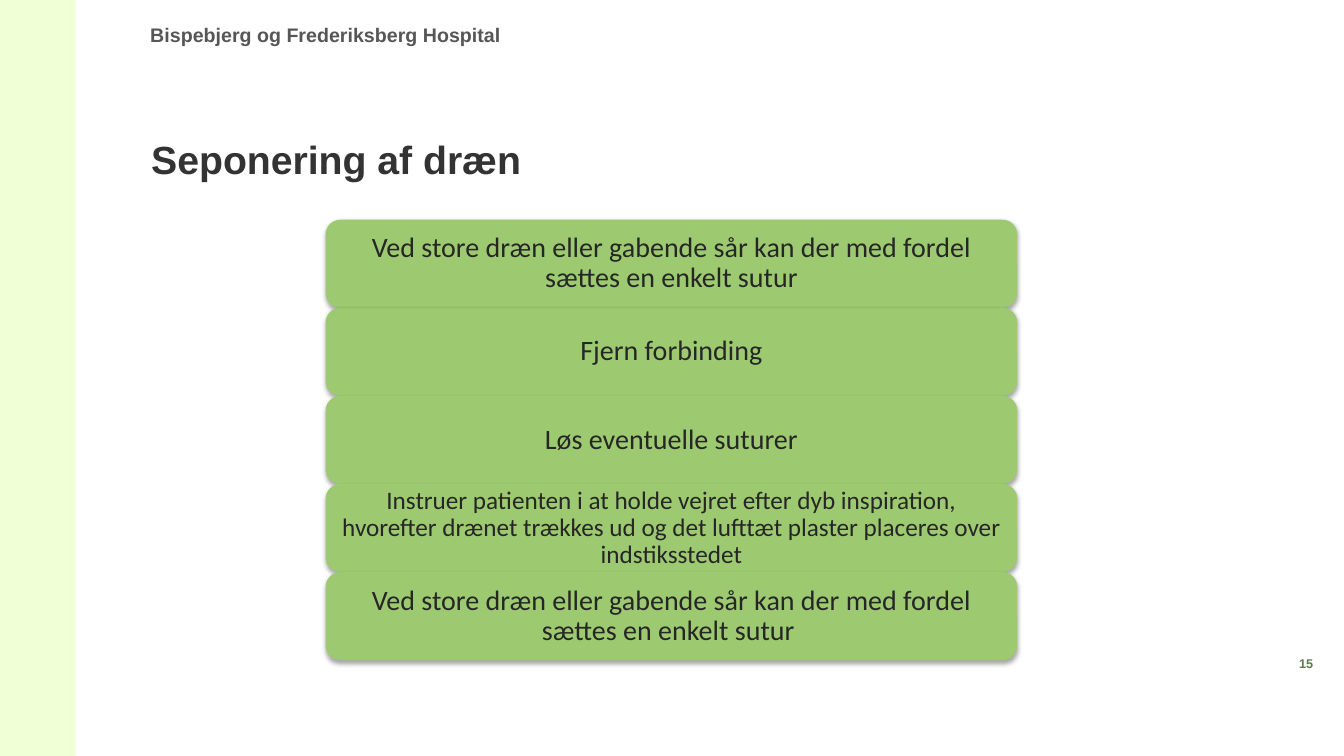
import lxml.etree
import pptx
import pptx.dml.color
import pptx.enum.shapes
import pptx.enum.text
import pptx.oxml.ns
import pptx.util

WIDTH, HEIGHT = 13.33, 7.5
COLORS = {
    "band": "F0FFD6",
    "header": "565656",
    "title": "333333",
    "step": "9DCA70",
    "step_text": "262626",
    "number": "567F43",
    "shadow": "000000",
}
STEPS = [
    ("Ved store dræn eller gabende sår kan der med fordel sættes en enkelt sutur", 20),
    ("Fjern forbinding", 20),
    ("Løs eventuelle suturer", 20),
    ("Instruer patienten i at holde vejret efter dyb inspiration, hvorefter drænet "
     "trækkes ud og det lufttæt plaster placeres over indstiksstedet", 18),
    ("Ved store dræn eller gabende sår kan der med fordel sættes en enkelt sutur ", 20),
]
ALIGN = pptx.enum.text.PP_ALIGN
ANCHOR = pptx.enum.text.MSO_ANCHOR
SHAPE = pptx.enum.shapes.MSO_SHAPE


def color(name):
    return pptx.dml.color.RGBColor.from_string(COLORS[name])


def inches(box):
    return [pptx.util.Inches(length) for length in box]


def write(shape, text, size, color_name, font="Arial", bold=True, align=ALIGN.LEFT,
          anchor=ANCHOR.TOP, spacing=1.0, margins=(0, 0)):
    frame = shape.text_frame
    frame.word_wrap = True
    frame.vertical_anchor = anchor
    frame.margin_left = frame.margin_right = pptx.util.Inches(margins[0])
    frame.margin_top = frame.margin_bottom = pptx.util.Inches(margins[1])
    paragraph = frame.paragraphs[0]
    paragraph.text = text
    paragraph.alignment = align
    paragraph.line_spacing = spacing
    paragraph.font.name = font
    paragraph.font.size = pptx.util.Pt(size)
    paragraph.font.bold = bold
    paragraph.font.color.rgb = color(color_name)


def add_filled(slide, kind, box, color_name):
    shape = slide.shapes.add_shape(kind, *inches(box))
    shape.shadow.inherit = False
    shape.fill.solid()
    shape.fill.fore_color.rgb = color(color_name)
    shape.line.fill.background()
    return shape


def add_shadow(shape):
    qn = pptx.oxml.ns.qn
    effects = shape._element.spPr.find(qn("a:effectLst"))
    shadow = lxml.etree.SubElement(
        effects, qn("a:outerShdw"), blurRad=str(pptx.util.Pt(3.1)),
        dist=str(pptx.util.Pt(1.8)), dir="5400000", rotWithShape="0")
    shade = lxml.etree.SubElement(shadow, qn("a:srgbClr"), val=COLORS["shadow"])
    lxml.etree.SubElement(shade, qn("a:alpha"), val="35000")


def add_frame(slide, box):
    left, top, width, height = box
    add_filled(slide, SHAPE.RECTANGLE, (left, top, 0.75, height), "band")
    header = slide.shapes.add_textbox(*inches((left + 1.49, top + 0.23, 6.69, 0.24)))
    write(header, "Bispebjerg og Frederiksberg Hospital", 14, "header")
    title = slide.shapes.add_textbox(*inches((left + 1.5, top + 0.95, 11.09, 0.91)))
    write(title, "Seponering af dræn", 28, "title", anchor=ANCHOR.BOTTOM,
          spacing=0.85, margins=(0, 0.05))
    number = slide.shapes.add_textbox(
        *inches((left + width - 0.75, top + 6.51, 0.75, 0.2)))
    write(number, "15", 9, "number", align=ALIGN.CENTER)


def add_steps(slide, box):
    left, top, width, height = box
    row = height / len(STEPS)
    for index, (text, size) in enumerate(STEPS):
        step = add_filled(slide, SHAPE.ROUNDED_RECTANGLE,
                          (left, top + index * row, width, row), "step")
        add_shadow(step)
        write(step, text, size, "step_text", font="Calibri", bold=False,
              align=ALIGN.CENTER, anchor=ANCHOR.MIDDLE, spacing=0.9,
              margins=(0.08, 0.04))


def main():
    presentation = pptx.Presentation()
    presentation.slide_width, presentation.slide_height = inches((WIDTH, HEIGHT))
    slide = presentation.slides.add_slide(presentation.slide_layouts[6])
    add_frame(slide, (0, 0, WIDTH, HEIGHT))
    add_steps(slide, (3.23, 2.18, 6.86, 4.37))
    presentation.save("out.pptx")


if __name__ == "__main__":
    main()
